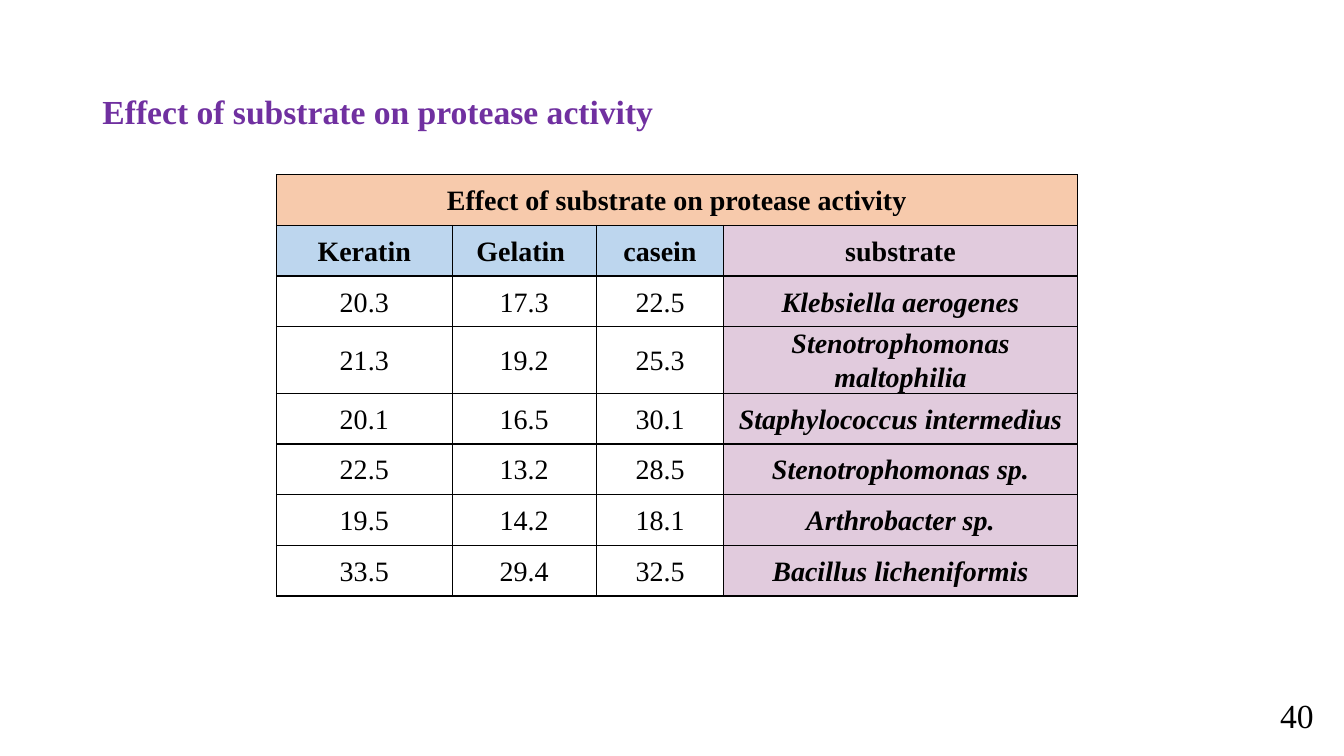
from lxml.etree import SubElement
from pptx import Presentation
from pptx.dml.color import RGBColor
from pptx.enum.text import MSO_ANCHOR as Anchor, PP_ALIGN as Align
from pptx.oxml.ns import qn
from pptx.util import Pt

FONT = "Times New Roman"
BLACK, PURPLE = "000000", "7030A0"
ORANGE, BLUE, PINK = "F7CAAC", "BDD6EE", "E1CBDD"
TITLE = "Effect of substrate on protease activity"
HEADINGS = ["Keratin", "Gelatin ", "casein", "substrate"]
ACTIVITY = [
    ("20.3", "17.3", "22.5", "Klebsiella aerogenes"),
    ("21.3", "19.2", "25.3", "Stenotrophomonas maltophilia"),
    ("20.1", "16.5", "30.1", "Staphylococcus intermedius"),
    ("22.5", "13.2", "28.5", "Stenotrophomonas sp."),
    ("19.5", "14.2", "18.1", "Arthrobacter sp."),
    ("33.5", "29.4", "32.5", "Bacillus licheniformis"),
]
COLUMN_WIDTHS = [125.6, 103, 91, 252.6]
ROW_HEIGHT = 36.2


def color(value):
    return RGBColor.from_string(value)


def place(shape, left, top, width, height):
    shape.left, shape.top = Pt(left), Pt(top)
    shape.width, shape.height = Pt(width), Pt(height)


def write(frame, text, size, align, ink=BLACK, bold=False, italic=False, spacing=1.0):
    para = frame.paragraphs[0]
    para.alignment = align
    para.line_spacing = spacing
    span = para.add_run()
    span.text = text
    font = span.font
    font.name, font.size = FONT, Pt(size)
    font.bold, font.italic = bold, italic
    font.color.rgb = color(ink)


def add_title(page):
    title = page.shapes.title
    place(title, 66, 28.8, 828, 104.4)
    title.text_frame.vertical_anchor = Anchor.MIDDLE
    write(title.text_frame, TITLE, 24, Align.LEFT, PURPLE, bold=True, spacing=0.9)


def add_page_number(page, number):
    box = page.shapes.add_textbox(Pt(899), Pt(491), Pt(46.4), Pt(39.6))
    box.text_frame.word_wrap = True
    box.text_frame.vertical_anchor = Anchor.MIDDLE
    write(box.text_frame, number, 24, Align.RIGHT)


def draw_borders(cell):
    properties = cell._tc.get_or_add_tcPr()
    for side in ("a:lnL", "a:lnR", "a:lnT", "a:lnB"):
        line = SubElement(properties, qn(side), w=str(Pt(1)))
        fill = SubElement(line, qn("a:solidFill"))
        SubElement(fill, qn("a:srgbClr"), val=BLACK)


def format_cell(cell, fill):
    draw_borders(cell)
    cell.vertical_anchor = Anchor.MIDDLE
    cell.margin_left = cell.margin_right = Pt(5)
    cell.margin_top = cell.margin_bottom = Pt(0)
    if fill:
        cell.fill.solid()
        cell.fill.fore_color.rgb = color(fill)
    else:
        cell.fill.background()


def fill_row(table, row, texts, fills, bolds, italics):
    for column, text in enumerate(texts):
        cell = table.cell(row, column)
        format_cell(cell, fills[column])
        if text:
            write(cell.text_frame, text, 20, Align.CENTER, bold=bolds[column],
                  italic=italics[column], spacing=1.07)


def add_activity_table(page):
    rows = len(ACTIVITY) + 2
    columns = len(COLUMN_WIDTHS)
    frame = page.shapes.add_table(rows, columns, Pt(197.4), Pt(124.8),
                                  Pt(sum(COLUMN_WIDTHS)), Pt(rows * ROW_HEIGHT))
    table = frame.table
    table.first_row = table.horz_banding = False
    for column, width in zip(table.columns, COLUMN_WIDTHS):
        column.width = Pt(width)
    for row in table.rows:
        row.height = Pt(ROW_HEIGHT)

    table.cell(0, 0).merge(table.cell(0, columns - 1))
    every, none = [True] * columns, [False] * columns
    last = [False] * (columns - 1) + [True]
    fill_row(table, 0, [TITLE, "", "", ""], [ORANGE] * columns, every, none)
    fill_row(table, 1, HEADINGS, [BLUE, BLUE, BLUE, PINK], every, none)
    for row, values in enumerate(ACTIVITY, start=2):
        fill_row(table, row, values, [None, None, None, PINK], last, last)


def main():
    deck = Presentation()
    deck.slide_width, deck.slide_height = Pt(960), Pt(540)
    page = deck.slides.add_slide(deck.slide_layouts[5])
    add_title(page)
    add_activity_table(page)
    add_page_number(page, "40")
    deck.save("out.pptx")


if __name__ == "__main__":
    main()
